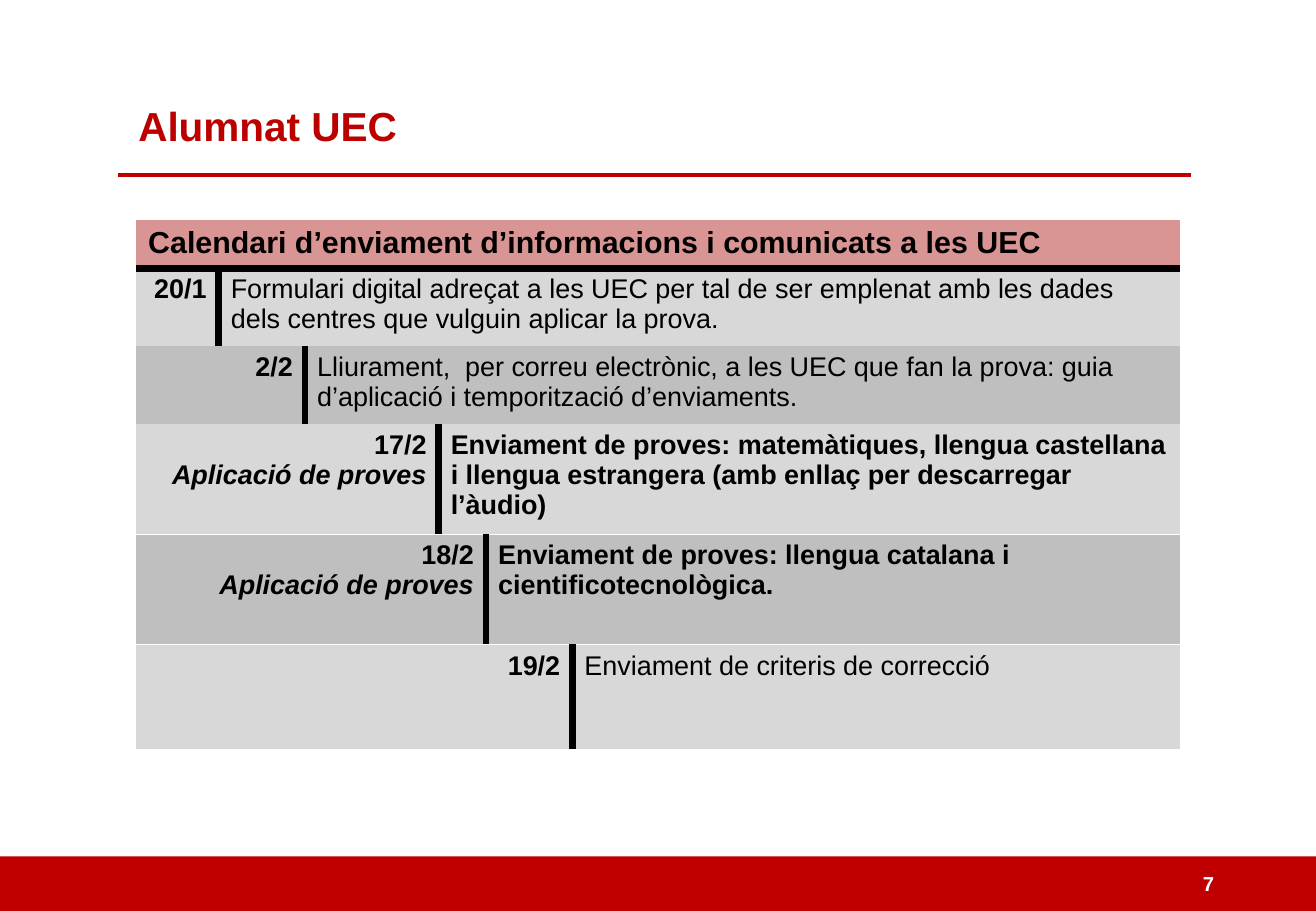
from lxml.etree import SubElement
from pptx import Presentation
from pptx.dml.color import RGBColor
from pptx.enum.shapes import MSO_CONNECTOR as CONN, MSO_SHAPE as SHAPE
from pptx.enum.text import MSO_ANCHOR as ANCHOR, PP_ALIGN as ALIGN
from pptx.oxml.ns import qn
from pptx.util import Inches, Pt

RED = RGBColor(0xC0, 0x00, 0x00)
TITLE_RED = RGBColor(0xBC, 0x00, 0x00)
PINK = RGBColor(0xD9, 0x95, 0x93)
LIGHT = RGBColor(0xD8, 0xD8, 0xD8)
MID = RGBColor(0xBF, 0xBF, 0xBF)
BLACK = RGBColor(0x00, 0x00, 0x00)
WHITE = RGBColor(0xFF, 0xFF, 0xFF)

FONT = "Arial"
GRID = 100
THICK = (BLACK, 4.5)
THIN = (WHITE, 1)

HEADING = "Calendari d’enviament d’informacions i comunicats a les UEC"
TESTS = "Aplicació de proves"
CALENDAR = [
    ("20/1", None, "Formulari digital adreçat a les UEC per tal de ser emplenat "
     "amb les dades dels centres que vulguin aplicar la prova.", False),
    ("2/2", None, "Lliurament,  per correu electrònic, a les UEC que fan la prova: "
     "guia d’aplicació i temporització d’enviaments.", False),
    ("17/2", TESTS, "Enviament de proves: matemàtiques, llengua castellana i llengua "
     "estrangera (amb enllaç per descarregar l’àudio)", True),
    ("18/2", TESTS, "Enviament de proves: llengua catalana i cientificotecnològica.", True),
    ("19/2", None, "Enviament de criteris de correcció", False),
]
COL_WIDTHS = [6.28, 6.56, 10.16, 3.6, 6.56, 46.17]
ROW_HEIGHTS = [5.33, 8.53, 8.53, 12.13, 12.13, 11.47]


class Deck:
    def __init__(self, width, height):
        self.prs = Presentation()
        self.prs.slide_width, self.prs.slide_height = Inches(width), Inches(height)
        self.s = self.prs.slides.add_slide(self.prs.slide_layouts[6])

    def x(self, cols):
        return round(self.prs.slide_width * cols / GRID)

    def y(self, rows):
        return round(self.prs.slide_height * rows / GRID)

    def box(self, left, top, width, height):
        return self.x(left), self.y(top), self.x(width), self.y(height)

    def add_run(self, tf, text, size, color, bold=True, italic=False, align=ALIGN.LEFT, first=True):
        p = tf.paragraphs[0] if first else tf.add_paragraph()
        p.alignment = align
        r = p.add_run()
        r.text = text
        r.font.name, r.font.size = FONT, Pt(size)
        r.font.bold, r.font.italic = bold, italic
        r.font.color.rgb = color

    def bar(self, *area, fill):
        sp = self.s.shapes.add_shape(SHAPE.RECTANGLE, *self.box(*area))
        sp.shadow.inherit = False
        sp.fill.solid()
        sp.fill.fore_color.rgb = fill
        sp.line.fill.background()

    def rule(self, left, right, row, color, weight):
        line = self.s.shapes.add_connector(
            CONN.STRAIGHT, self.x(left), self.y(row), self.x(right), self.y(row))
        line.line.color.rgb, line.line.width = color, Pt(weight)
        SubElement(line._element.spPr, qn("a:effectLst"))

    def text(self, *area, text, size, color, anchor=ANCHOR.TOP):
        tf = self.s.shapes.add_textbox(*self.box(*area)).text_frame
        tf.word_wrap, tf.vertical_anchor = True, anchor
        self.add_run(tf, text, size, color)

    def table(self, left, top, widths, heights):
        area = self.box(left, top, sum(widths), sum(heights))
        tbl = self.s.shapes.add_table(len(heights), len(widths), *area).table
        tbl.first_row = tbl.horz_banding = False
        for col, width in zip(tbl.columns, widths):
            col.width = self.x(width)
        for row, height in zip(tbl.rows, heights):
            row.height = self.y(height)
        return tbl

    def cell_style(self, cell, fill, borders):
        tcPr = cell._tc.get_or_add_tcPr()
        for side in "LRTB":
            ln = SubElement(tcPr, qn(f"a:ln{side}"))
            if borders.get(side):
                color, weight = borders[side]
                ln.set("w", str(Pt(weight)))
                SubElement(SubElement(ln, qn("a:solidFill")), qn("a:srgbClr"), val=str(color))
            else:
                SubElement(ln, qn("a:noFill"))
        cell.fill.solid()
        cell.fill.fore_color.rgb = fill


def calendar(deck):
    tbl = deck.table(10.34, 24.13, COL_WIDTHS, ROW_HEIGHTS)
    last_col = len(COL_WIDTHS) - 1
    row_lines = {1: THICK, 4: THIN, 5: THIN}
    for row in range(len(ROW_HEIGHTS)):
        fill = PINK if row == 0 else LIGHT if row % 2 else MID
        for col in range(len(COL_WIDTHS)):
            deck.cell_style(tbl.cell(row, col), fill, {
                "L": THICK if row and col == row else None,
                "R": THICK if row and col in (0, row - 1) else None,
                "T": row_lines.get(row),
                "B": row_lines.get(row + 1),
            })

    heading = tbl.cell(0, 0)
    heading.merge(tbl.cell(0, last_col))
    deck.add_run(heading.text_frame, HEADING, 18, BLACK)

    for row, (date, note, message, bold) in enumerate(CALENDAR, 1):
        when, what = tbl.cell(row, 0), tbl.cell(row, row)
        if row > 1:
            when.merge(tbl.cell(row, row - 1))
        if row < last_col:
            what.merge(tbl.cell(row, last_col))
        deck.add_run(when.text_frame, date, 16, BLACK, align=ALIGN.RIGHT)
        if note:
            deck.add_run(when.text_frame, note, 16, BLACK, italic=True,
                         align=ALIGN.RIGHT, first=False)
        deck.add_run(what.text_frame, message, 16, BLACK, bold=bold)


def main():
    deck = Deck(10.83, 7.5)
    deck.bar(0, 94, 100, 6, fill=RED)
    deck.rule(8.96, 90.49, 19.2, RED, 2.25)
    deck.text(90.49, 94.8, 8.4, 4.4, text="7", size=12, color=WHITE, anchor=ANCHOR.MIDDLE)
    deck.text(9.6, 10.4, 80.98, 8.13, text="Alumnat UEC", size=24, color=TITLE_RED)
    calendar(deck)
    deck.prs.save("out.pptx")


if __name__ == "__main__":
    main()
